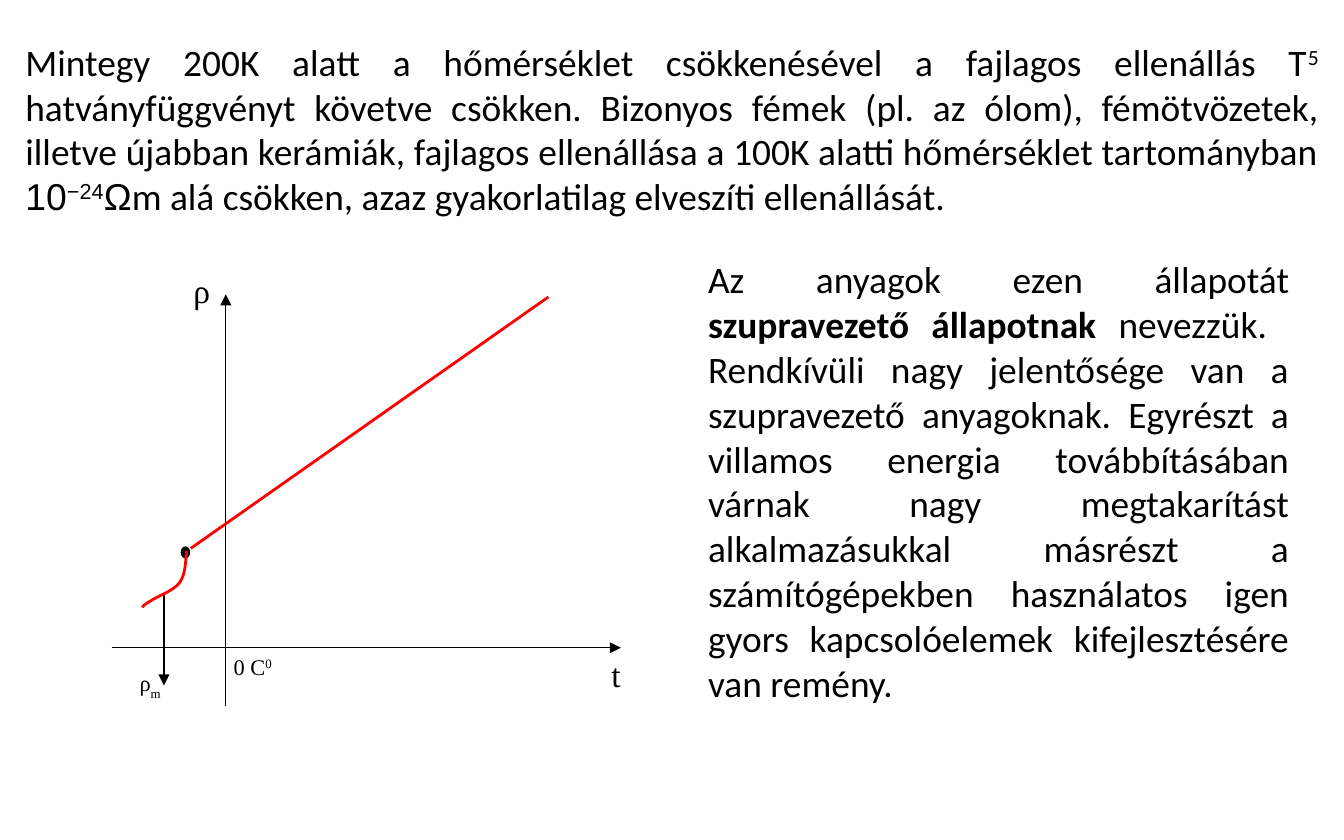
"""Builds a slide on superconductivity with a sketch of resistivity against temperature."""
from lxml import etree
from pptx import Presentation
from pptx.dml.color import RGBColor
from pptx.enum.shapes import MSO_CONNECTOR, MSO_SHAPE
from pptx.enum.text import PP_ALIGN
from pptx.oxml.ns import qn
from pptx.util import Inches, Pt

BLACK = RGBColor(0x00, 0x00, 0x00)
RED = RGBColor(0xFF, 0x00, 0x00)
SANS, ARIAL, SERIF = "Calibri", "Arial", "Times New Roman"
LINE, OVAL = MSO_CONNECTOR.STRAIGHT, MSO_SHAPE.OVAL
LEFT, FULL = PP_ALIGN.LEFT, PP_ALIGN.JUSTIFY
UP, DOWN = "30000", "-30000"

deck = Presentation()
deck.slide_width, deck.slide_height = Inches(10), Inches(6.25)
slide = deck.slides.add_slide(deck.slide_layouts[6])
shapes = slide.shapes


def add_text(box, size, align, parts):
    frame = shapes.add_textbox(*map(Inches, box)).text_frame
    frame.word_wrap = True
    para = frame.paragraphs[0]
    para.alignment = align
    for text, face, base, bold in parts:
        run = para.add_run()
        run.text = text
        font = run.font
        font.name, font.size, font.bold = face, Pt(size), bold
        font.color.rgb = BLACK
        if base:
            run._r.get_or_add_rPr().set("baseline", base)


def add_line(start, end, color, width, arrow):
    line = shapes.add_connector(LINE, *map(Inches, start + end))
    line.line.color.rgb = color
    line.line.width = Pt(width)
    if arrow:
        etree.SubElement(line.line._get_or_add_ln(), qn("a:tailEnd"), type="triangle")
    etree.SubElement(line._element.spPr, qn("a:effectLst"))


lines = [
    ((1.68, 5.25), (1.68, 2.19), BLACK, 0.75, True),
    ((0.83, 4.82), (4.62, 4.82), BLACK, 0.75, True),
    ((1.42, 4.08), (4.08, 2.21), RED, 1.5, False),
    ((1.22, 4.41), (1.22, 5.1), BLACK, 0.75, True),
]
for line in lines:
    add_line(*line)

dot = shapes.add_shape(OVAL, Inches(1.35), Inches(4.07), Inches(0.06), Inches(0.08))
dot.shadow.inherit = False
dot.fill.solid()
dot.fill.fore_color.rgb = BLACK
dot.line.color.rgb = BLACK
dot.line.width = Pt(0.75)

knots = [
    (1.39, 4.1), (1.38, 4.19), (1.38, 4.27), (1.34, 4.33), (1.3, 4.39),
    (1.19, 4.43), (1.14, 4.46), (1.09, 4.49), (1.07, 4.5), (1.06, 4.52),
]
STEPS = 12
points = []
for first in range(0, len(knots) - 1, 3):
    arc = knots[first:first + 4]
    for step in range(1, STEPS + 1):
        t = step / STEPS
        mix = ((1 - t) ** 3, 3 * t * (1 - t) ** 2, 3 * t * t * (1 - t), t ** 3)
        points.append([Inches(sum(m * k[axis] for m, k in zip(mix, arc))) for axis in (0, 1)])
path = shapes.build_freeform(Inches(knots[0][0]), Inches(knots[0][1]))
path.add_line_segments(points, close=False)
curve = path.convert_to_shape()
curve.shadow.inherit = False
curve.fill.background()
curve.line.color.rgb = RED
curve.line.width = Pt(1.5)

labels = [
    ((1.34, 1.96, 0.56, 0.66), 18, "ρ", "", None),
    ((0.94, 4.93, 0.7, 0.66), 12, "ρ", "m", DOWN),
    ((4.45, 4.82, 0.48, 0.5), 18, "t", "", None),
    ((1.64, 4.81, 0.89, 0.58), 12, "0 C", "0", UP),
]
for box, size, text, mark, base in labels:
    parts = [(text, SERIF, None, False)]
    if mark:
        parts.append((mark, SERIF, base, False))
    add_text(box, size, LEFT, parts)

add_text((0.09, 0.24, 9.82, 1.45), 20, FULL, [
    ("Mintegy 200K alatt a hőmérséklet csökkenésével a fajlagos ellenállás T", SANS, None, False),
    ("5", SANS, UP, False),
    (" hatványfüggvényt követve csökken. Bizonyos fémek (pl. az ólom), fémötvözetek, "
     "illetve újabban kerámiák, fajlagos ellenállása a 100K alatti hőmérséklet "
     "tartományban ", SANS, None, False),
    ("10", ARIAL, None, False),
    ("−24", ARIAL, UP, False),
    ("Ω", ARIAL, None, False),
    ("m alá csökken, azaz gyakorlatilag elveszíti ellenállását.", SANS, None, False),
])
add_text((5.17, 1.86, 4.52, 3.47), 20, FULL, [
    ("Az anyagok ezen állapotát ", SANS, None, False),
    ("szupravezető állapotnak ", SANS, None, True),
    ("nevezzük.  Rendkívüli nagy jelentősége van a szupravezető anyagoknak. Egyrészt a "
     "villamos energia továbbításában várnak nagy megtakarítást alkalmazásukkal másrészt a "
     "számítógépekben használatos igen gyors kapcsolóelemek kifejlesztésére van remény.",
     SANS, None, False),
])

deck.save("out.pptx")
